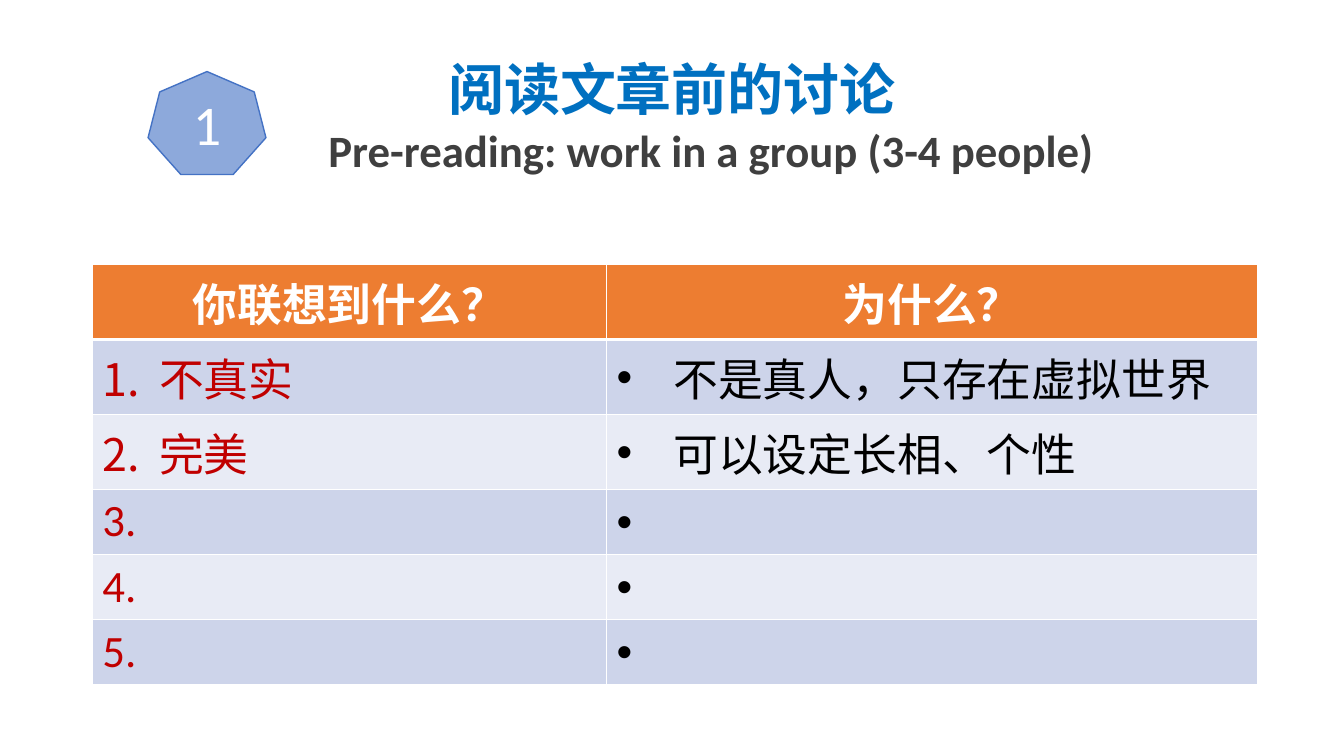
from lxml import etree
from pptx import Presentation
from pptx.dml.color import RGBColor
from pptx.enum.shapes import MSO_SHAPE
from pptx.enum.text import MSO_ANCHOR, PP_ALIGN
from pptx.oxml.ns import qn
from pptx.util import Pt

CJK = "Noto Sans CJK SC"
LATIN = "Calibri"
HEADER = ["你联想到什么？", "为什么？"]
# A blank answer keeps its list marker; the last two numbers are typed.
ANSWERS = [
    ("不真实", "不是真人，只存在虚拟世界"),
    ("完美", "可以设定长相、个性"),
    (" ", " "),
    ("4.", " "),
    ("5.", " "),
]
COLUMN_WIDTHS = [367.2, 465.3]
ROW_HEIGHTS = [53.5] * 3 + [46.5] * 3


def rgb(value):
    return RGBColor.from_string(value)


def add_run(p, text, color, **format_values):
    r = p.add_run()
    r.text = text
    r.font.color.rgb = rgb(color)
    for name, value in format_values.items():
        setattr(r.font, name, value)
    if format_values["name"] == CJK:
        etree.SubElement(r._r.get_or_add_rPr(), qn("a:ea"), typeface=CJK)


def set_list(p, marker, start, color):
    """Hang the paragraph; marker is a bullet, "number" or None for a typed number."""
    pPr = p._p.get_or_add_pPr()
    pPr.set("marL", str(Pt(40.5)))
    pPr.set("indent", str(Pt(-40.5)))
    if marker is None:
        etree.SubElement(pPr, qn("a:buNone"))
        return
    bu_color = etree.SubElement(pPr, qn("a:buClr"))
    etree.SubElement(bu_color, qn("a:srgbClr"), val=color)
    if marker == "number":
        etree.SubElement(pPr, qn("a:buFont"), typeface=LATIN)
        etree.SubElement(pPr, qn("a:buAutoNum"), type="arabicPeriod", startAt=str(start))
    else:
        etree.SubElement(pPr, qn("a:buFont"), typeface="Arial")
        etree.SubElement(pPr, qn("a:buChar"), char=marker)


def set_cell(cell, fill, bottom=1):
    tcPr = cell._tc.get_or_add_tcPr()
    for side, width in {"L": 1, "R": 1, "T": 1, "B": bottom}.items():
        ln = etree.SubElement(tcPr, qn(f"a:ln{side}"), w=str(Pt(width)))
        solid = etree.SubElement(ln, qn("a:solidFill"))
        etree.SubElement(solid, qn("a:srgbClr"), val="FFFFFF")
    cell.fill.solid()
    cell.fill.fore_color.rgb = rgb(fill)


def add_title(slide):
    tf = slide.shapes.add_textbox(Pt(66), Pt(27.5), Pt(828), Pt(104.4)).text_frame
    tf.word_wrap = True
    tf.vertical_anchor = MSO_ANCHOR.BOTTOM
    tf.margin_bottom = Pt(5.6)
    p = tf.paragraphs[0]
    add_run(p, "阅读文章前的讨论", "0070C0", name=CJK, size=Pt(40), bold=True)
    subtitle = tf.add_paragraph()
    subtitle.space_before = Pt(6.5)
    subtitle._p.get_or_add_pPr().set("marL", str(Pt(56)))
    add_run(subtitle, "Pre-reading: work in a group (3-4 people)", "3F3F3F",
            name=LATIN, size=Pt(32), bold=True)
    for p in tf.paragraphs:
        p.alignment = PP_ALIGN.CENTER
        p.line_spacing = 0.85


def add_table(slide):
    frame = slide.shapes.add_table(len(ROW_HEIGHTS), 2, Pt(66), Pt(189),
                                   Pt(sum(COLUMN_WIDTHS)), Pt(sum(ROW_HEIGHTS)))
    table = frame.table
    for column, width in zip(table.columns, COLUMN_WIDTHS):
        column.width = Pt(width)
    for row, height in zip(table.rows, ROW_HEIGHTS):
        row.height = Pt(height)
    for col, text in enumerate(HEADER):
        cell = table.cell(0, col)
        set_cell(cell, "ED7D31", bottom=3)
        p = cell.text_frame.paragraphs[0]
        p.alignment = PP_ALIGN.CENTER
        add_run(p, text, "FFFFFF", name=CJK, size=Pt(32), bold=True)
    styles = [("number", "C00000"), ("•", "000000")]
    for row, texts in enumerate(ANSWERS, 1):
        for col, (text, (marker, color)) in enumerate(zip(texts, styles)):
            cell = table.cell(row, col)
            set_cell(cell, "CDD4EA" if row % 2 else "E8EBF5")
            p = cell.text_frame.paragraphs[0]
            typed_number = text.endswith(".")
            set_list(p, None if typed_number else marker, row, color)
            add_run(p, text, color, name=LATIN if typed_number or text == " " else CJK,
                    size=Pt(32), bold=False)


def add_step_badge(slide):
    sp = slide.shapes.add_shape(MSO_SHAPE.HEPTAGON, Pt(105.8), Pt(51.1), Pt(84.2), Pt(73.5))
    sp.shadow.inherit = False
    sp.fill.solid()
    sp.fill.fore_color.rgb = rgb("8DA9DB")
    sp.line.color.rgb = rgb("4472C4")
    sp.line.width = Pt(1)
    tf = sp.text_frame
    tf.vertical_anchor = MSO_ANCHOR.MIDDLE
    p = tf.paragraphs[0]
    p.alignment = PP_ALIGN.CENTER
    add_run(p, "1", "FFFFFF", name=LATIN, size=Pt(40))


def main():
    prs = Presentation()
    prs.slide_width, prs.slide_height = Pt(960), Pt(540)
    slide = prs.slides.add_slide(prs.slide_layouts[6])
    add_title(slide)
    add_table(slide)
    add_step_badge(slide)
    prs.save("out.pptx")


if __name__ == "__main__":
    main()
